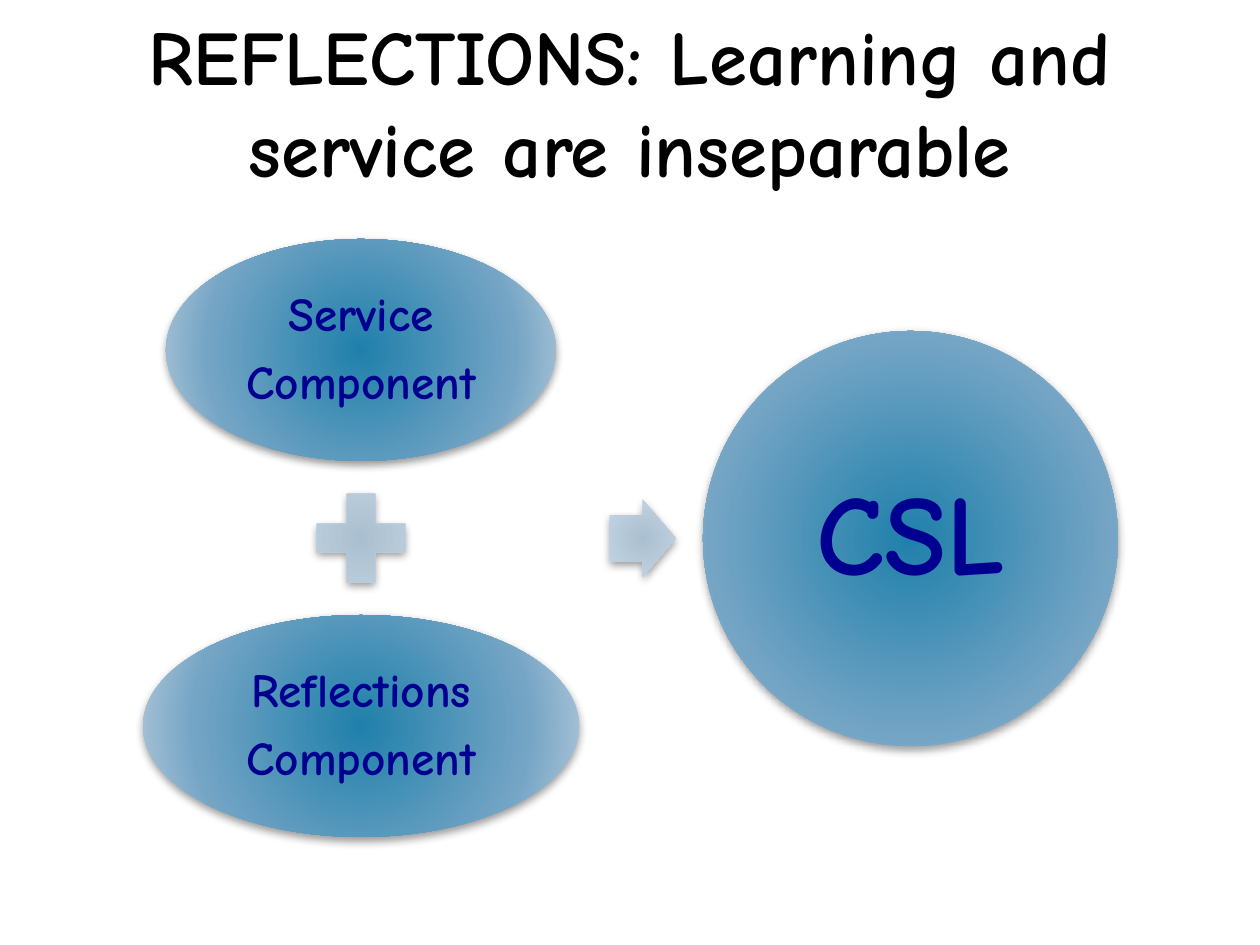
from lxml import etree
from pptx import Presentation
from pptx.dml.color import RGBColor
from pptx.enum.shapes import MSO_SHAPE as SHAPE
from pptx.enum.text import MSO_ANCHOR as ANCHOR, PP_ALIGN as ALIGN
from pptx.oxml import parse_xml
from pptx.oxml.ns import nsdecls, qn
from pptx.util import Emu, Pt

PX = 914400 / 126
FONT = "Comic Neue"
COLORS = {"title": "000000", "label": "000090", "shadow": "000000"}
GRADIENTS = {
    "circle": ["2080AB", "75A5C5", "B8CCDC"],
    "operator": ["AABFD0", "BCCFDE", "D8E2EB"],
}
STOPS = [0, 69, 100]


def px(*lengths):
    return [Emu(round(n * PX)) for n in lengths]


class Deck:
    """Holds the style and the current slide, and draws each kind of element."""

    def __init__(self, width, height):
        self.prs = Presentation()
        self.prs.slide_width, self.prs.slide_height = px(width, height)
        self.s = self.prs.slides.add_slide(self.prs.slide_layouts[6])

    def text(self, box, lines, size, color, inset=None, anchor=ANCHOR.MIDDLE, spaced=True):
        tf = self.s.shapes.add_textbox(*px(*box)).text_frame
        tf.word_wrap = True
        tf.vertical_anchor = anchor
        if inset is not None:
            tf.margin_left, tf.margin_top, tf.margin_right, tf.margin_bottom = px(*[inset] * 4)
        for i, line in enumerate(lines):
            p = tf.add_paragraph() if i else tf.paragraphs[0]
            p.alignment = ALIGN.CENTER
            if spaced:
                p.line_spacing = 0.9
                after = etree.SubElement(p._p.get_or_add_pPr(), qn("a:spcAft"))
                etree.SubElement(after, qn("a:spcPct"), val="35000")
            r = p.add_run()
            r.text = line
            r.font.name, r.font.size, r.font.bold = FONT, Pt(size), True
            r.font.color.rgb = RGBColor.from_string(COLORS[color])

    def shape(self, kind, box, gradient, adjustments=()):
        sp = self.s.shapes.add_shape(kind, *px(*box))
        for i, value in enumerate(adjustments):
            sp.adjustments[i] = value
        sp.line.fill.background()
        stops = "".join(
            f'<a:gs pos="{pos * 1000}"><a:srgbClr val="{color}"/></a:gs>'
            for pos, color in zip(STOPS, GRADIENTS[gradient])
        )
        fill = parse_xml(
            f'<a:gradFill {nsdecls("a")} rotWithShape="1"><a:gsLst>{stops}</a:gsLst>'
            '<a:path path="circle"><a:fillToRect l="100000" t="100000" r="100000" b="100000"/>'
            "</a:path></a:gradFill>"
        )
        shadow = parse_xml(
            f'<a:effectLst {nsdecls("a")}><a:outerShdw blurRad="{Pt(5)}" dist="{Pt(2)}" '
            f'dir="5400000" rotWithShape="0"><a:srgbClr val="{COLORS["shadow"]}">'
            '<a:alpha val="40000"/></a:srgbClr></a:outerShdw></a:effectLst>'
        )
        sp._element.spPr.find(qn("a:prstGeom")).addnext(fill)
        sp._element.spPr.append(shadow)

    def circle(self, box, lines, size, inset):
        self.shape(SHAPE.OVAL, box, "circle")
        self.text(box, lines, size, "label", inset)


def main():
    deck = Deck(1260, 945)
    deck.text((76, 15, 1108, 184), ["REFLECTIONS: Learning and service are inseparable"],
              44, "title", anchor=ANCHOR.BOTTOM, spaced=False)
    deck.circle((166, 239, 390, 222), ["Service", "Component"], 27, 5)
    deck.shape(SHAPE.MATH_PLUS, (301, 478, 120, 120), "operator")
    deck.circle((143, 615, 436, 222), ["Reflections", "Component"], 27, 5)
    deck.shape(SHAPE.RIGHT_ARROW, (610, 500, 66, 77), "operator", (0.6, 0.5))
    deck.circle((703, 331, 415, 415), ["CSL"], 65, 11)
    deck.prs.save("out.pptx")


if __name__ == "__main__":
    main()
